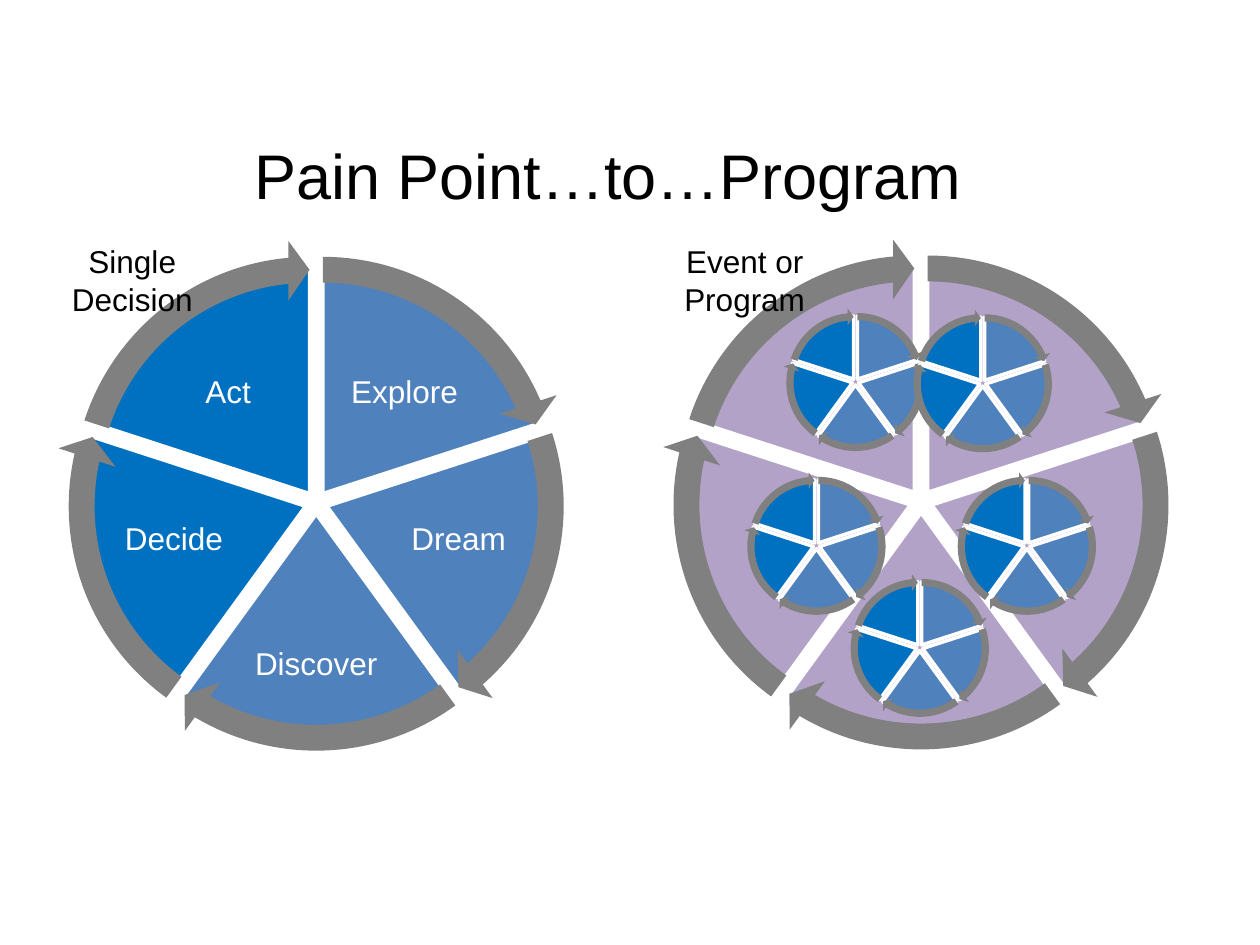
import math

import pptx
import pptx.dml.color
import pptx.enum.shapes
import pptx.enum.text
import pptx.util

Inches = pptx.util.Inches
Pt = pptx.util.Pt
MSO_SHAPE = pptx.enum.shapes.MSO_SHAPE
MSO_ANCHOR = pptx.enum.text.MSO_ANCHOR

BLUE, DEEP_BLUE, PURPLE = "4F81BD", "0070C0", "B3A2C7"
GRAY, WHITE, BLACK = "808080", "FFFFFF", "000000"
DECISION_COLORS = [BLUE, BLUE, BLUE, DEEP_BLUE, DEEP_BLUE]
PROGRAM_COLORS = [PURPLE] * 5

# Label text, centre offset from the wheel centre, and size
STEPS = [
    ("Explore", 0.7, -0.87, 1.15, 0.77),
    ("Dream", 1.13, 0.3, 1.07, 0.85),
    ("Discover", 0, 1.29, 1.08, 0.94),
    ("Decide", -1.13, 0.3, 1.07, 0.85),
    ("Act", -0.7, -0.87, 1.15, 0.77),
]


def rgb(value):
    return pptx.dml.color.RGBColor.from_string(value)


def add_text(shapes, text, box, size, color, margin=None, anchor=MSO_ANCHOR.TOP):
    shape = shapes.add_textbox(*[Inches(length) for length in box])
    frame = shape.text_frame
    frame.word_wrap = True
    frame.vertical_anchor = anchor
    if margin is not None:
        frame.margin_left = frame.margin_right = Inches(margin)
        frame.margin_top = frame.margin_bottom = Inches(margin)
    frame.text = text
    paragraph = frame.paragraphs[0]
    paragraph.alignment = pptx.enum.text.PP_ALIGN.CENTER
    font = paragraph.runs[0].font
    font.name, font.size = "Arial", Pt(size)
    font.color.rgb = rgb(color)
    return shape


def add_centered_shape(shapes, kind, center_x, center_y, size, color, adjustments):
    shape = shapes.add_shape(kind, Inches(center_x - size / 2),
                             Inches(center_y - size / 2), Inches(size), Inches(size))
    shape.shadow.inherit = False
    shape.fill.solid()
    shape.fill.fore_color.rgb = rgb(color)
    shape.line.fill.background()
    for index, value in enumerate(adjustments):
        shape.adjustments[index] = value
    return shape


def angle_value(degrees):
    """Convert degrees to an adjustment value (60000ths over 100000)."""
    return degrees % 360 * 0.6


def add_wheel(slide, left, top, diameter, colors, steps=()):
    shapes = slide.shapes.add_group_shape().shapes
    center_x, center_y = left + diameter / 2, top + diameter / 2
    gap = diameter * 0.025
    sectors = []
    for index in range(5):
        start = 270 + 72 * index
        middle = math.radians(start + 36)
        sectors.append((start, center_x + gap * math.cos(middle),
                        center_y + gap * math.sin(middle)))

    # Slices, each with its label when there is one
    for index, (start, x, y) in enumerate(sectors):
        pie = add_centered_shape(shapes, MSO_SHAPE.PIE, x, y, diameter, colors[index],
                                 [angle_value(start), angle_value(start + 72)])
        pie.line.color.rgb = rgb(WHITE)
        pie.line.width = Pt(2)
        if steps:
            text, dx, dy, width, height = steps[index]
            box = (center_x + dx - width / 2, center_y + dy - height / 2, width, height)
            label = add_text(shapes, text, box, 18, WHITE, 0.03, MSO_ANCHOR.MIDDLE)
            label.text_frame.paragraphs[0].line_spacing = 0.9

    # Arrows around the rim
    for start, x, y in sectors:
        add_centered_shape(shapes, MSO_SHAPE.CIRCULAR_ARROW, x, y, diameter * 1.125, GRAY,
                           [0.051, 3.275, angle_value(start + 72) - 3.275,
                            angle_value(start), 0.059])


def add_title(slide, box):
    add_text(slide.shapes, "Pain Point…to…Program", box, 36, BLACK, 0.1, MSO_ANCHOR.MIDDLE)


def add_caption(slide, text, box):
    caption = add_text(slide.shapes, text, box, 18, BLACK)
    caption.text_frame.auto_size = pptx.enum.text.MSO_AUTO_SIZE.SHAPE_TO_FIT_TEXT


def main():
    presentation = pptx.Presentation()
    presentation.slide_width = Inches(10)
    presentation.slide_height = Inches(7.5)
    slide = presentation.slides.add_slide(presentation.slide_layouts[6])

    add_title(slide, (0.56, 0.75, 8.53, 1.26))

    # Large wheels: one decision, then the whole program
    add_wheel(slide, 0.72, 2.2, 3.58, DECISION_COLORS, STEPS)
    add_wheel(slide, 5.52, 2.19, 3.58, PROGRAM_COLORS)

    # Small decision wheels inside the program
    for left, top in [(6.29, 2.53), (7.3, 2.54), (7.65, 3.83), (6.8, 4.64), (5.98, 3.83)]:
        add_wheel(slide, left, top, 1, DECISION_COLORS)

    add_caption(slide, "Single Decision", (0.11, 1.87, 1.88, 0.4))
    add_caption(slide, "Event or Program", (4.97, 1.87, 1.88, 0.71))
    presentation.save("out.pptx")


if __name__ == "__main__":
    main()
